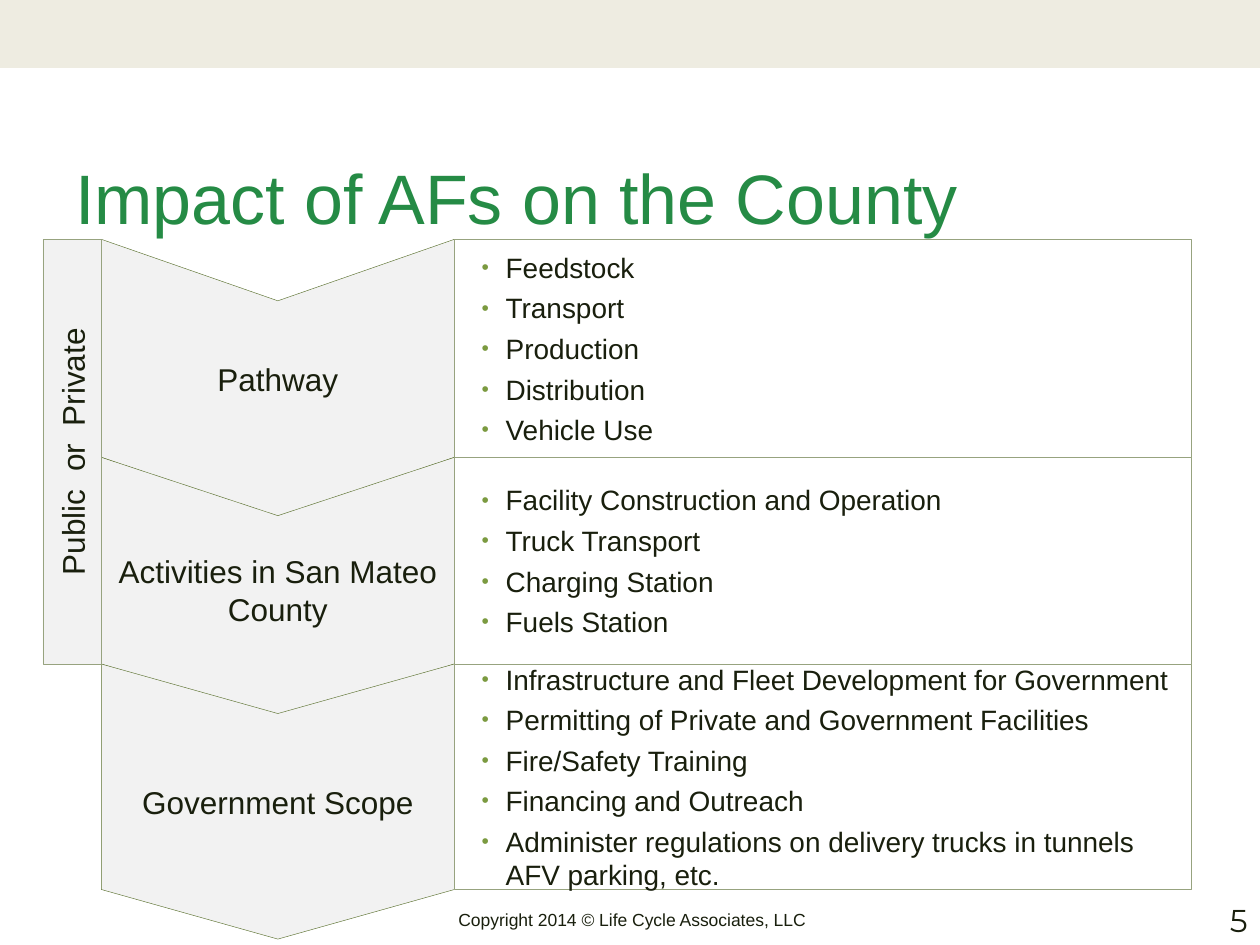
from lxml import etree
from pptx import Presentation
from pptx.dml.color import RGBColor
from pptx.enum.shapes import MSO_SHAPE
from pptx.enum.text import MSO_ANCHOR, PP_ALIGN
from pptx.oxml.ns import qn
from pptx.util import Inches, Pt

RECT, CHEVRON = MSO_SHAPE.RECTANGLE, MSO_SHAPE.CHEVRON
LEFT, CENTER, RIGHT = PP_ALIGN.LEFT, PP_ALIGN.CENTER, PP_ALIGN.RIGHT
MIDDLE, BOTTOM = MSO_ANCHOR.MIDDLE, MSO_ANCHOR.BOTTOM

# Grid: 100 columns by 75 rows
COLS, ROWS = 100, 75
SIDE_X, STAGE_X, LIST_X, END_X = 3.4, 8.05, 36.05, 94.55
TOP = 19

# Stage name, height in rows, notch as a share of the chevron, list items
STAGES = [
    ("Pathway", 17.3, 0.22,
     ["Feedstock", "Transport", "Production", "Distribution", "Vehicle Use"]),
    ("Activities in San Mateo County", 16.4, 0.22,
     ["Facility Construction and Operation", "Truck Transport",
      "Charging Station", "Fuels Station"]),
    ("Government Scope", 17.9, 0.18,
     ["Infrastructure and Fleet Development for Government",
      "Permitting of Private and Government Facilities",
      "Fire/Safety Training", "Financing and Outreach",
      "Administer regulations on delivery trucks in tunnels AFV parking, etc."]),
]


def color(value):
    return RGBColor.from_string(value)


class Deck:
    FONT, INK, GREEN = "Arial", "191F0D", "258B45"
    BAND, PANEL, WHITE = "EEECE1", "F2F2F2", "FFFFFF"
    EDGE, STAGE_EDGE, BULLET = "97A37F", "5B712F", "7B9A40"

    def __init__(self):
        self.prs = Presentation()
        self.prs.slide_width, self.prs.slide_height = Inches(10), Inches(7.5)
        self.slide = self.prs.slides.add_slide(self.prs.slide_layouts[6])

    def box(self, x, y, w, h):
        col, row = self.prs.slide_width / COLS, self.prs.slide_height / ROWS
        return round(x * col), round(y * row), round(w * col), round(h * row)

    def run(self, p, text, size, ink=INK, font=FONT):
        r = p.add_run()
        r.text = text
        r.font.size, r.font.name = Pt(size), font
        r.font.color.rgb = color(ink)

    def text(self, x, y, w, h, text, size, ink=INK, font=FONT,
             align=LEFT, anchor=BOTTOM, wrap=True):
        tf = self.slide.shapes.add_textbox(*self.box(x, y, w, h)).text_frame
        tf.word_wrap, tf.vertical_anchor = wrap, anchor
        tf.paragraphs[0].alignment = align
        self.run(tf.paragraphs[0], text, size, ink, font)

    def shape(self, kind, x, y, w, h, fill, edge=None):
        s = self.slide.shapes.add_shape(kind, *self.box(x, y, w, h))
        s.shadow.inherit = False
        s.fill.solid()
        s.fill.fore_color.rgb = color(fill)
        if edge:
            s.line.color.rgb = color(edge)
            s.line.width = Pt(0.25)
        else:
            s.line.fill.background()
        return s

    def upward_label(self, s, text):
        tf = s.text_frame
        tf.word_wrap, tf.vertical_anchor = True, MIDDLE
        s.element.txBody.find(qn("a:bodyPr")).set("vert", "vert270")
        tf.paragraphs[0].alignment = CENTER
        self.run(tf.paragraphs[0], text, 18)

    def stage(self, x, y, w, h, notch, text):
        # The chevron lies on its side, so its length becomes its height
        length = h / (1 - notch)
        s = self.shape(CHEVRON, x + (w - length) / 2, y + (length - w) / 2,
                       length, w, self.PANEL, self.STAGE_EDGE)
        s.adjustments[0] = notch
        s.rotation = 90
        self.upward_label(s, text)

    def bullet(self, p):
        pPr = p._p.get_or_add_pPr()
        pPr.set("marL", str(Inches(0.31)))
        pPr.set("indent", str(Inches(-0.19)))
        clr = etree.SubElement(pPr, qn("a:buClr"))
        etree.SubElement(clr, qn("a:srgbClr"), val=self.BULLET)
        etree.SubElement(pPr, qn("a:buSzPct"), val="75000")
        etree.SubElement(pPr, qn("a:buFont"), typeface=self.FONT)
        etree.SubElement(pPr, qn("a:buChar"), char="•")

    def bullet_list(self, x, y, w, h, items):
        tf = self.shape(RECT, x, y, w, h, self.WHITE, self.EDGE).text_frame
        tf.word_wrap, tf.vertical_anchor = True, MIDDLE
        for i, item in enumerate(items):
            p = tf.add_paragraph() if i else tf.paragraphs[0]
            self.bullet(p)
            p.alignment = LEFT
            if i:
                p.space_before = Pt(4)
            self.run(p, item, 16)


def main():
    deck = Deck()

    # Top band, footer, title and page number
    deck.shape(RECT, 0, 0, COLS, 5.4, deck.BAND)
    deck.text(35.4, 71.6, 29.6, 2.7, "Copyright 2014 © Life Cycle Associates, LLC",
              10, wrap=False)
    deck.text(5, 11.8, 91.6, 7.6, "Impact of AFs on the County", 40, deck.GREEN,
              anchor=MIDDLE)
    deck.text(76.7, 70, 23.3, 5, "5", 18, font="Montserrat", align=RIGHT)

    # Stage chevrons with their lists
    y = TOP
    for name, height, notch, items in STAGES:
        deck.stage(STAGE_X, y, LIST_X - STAGE_X, height, notch, name)
        deck.bullet_list(LIST_X, y, END_X - LIST_X, height, items)
        y += height

    # Side bar beside the first two stages
    span = sum(height for _, height, _, _ in STAGES[:2])
    bar = deck.shape(RECT, SIDE_X, TOP, STAGE_X - SIDE_X, span, deck.PANEL, deck.EDGE)
    deck.upward_label(bar, "Public  or  Private")

    deck.prs.save("out.pptx")


if __name__ == "__main__":
    main()
